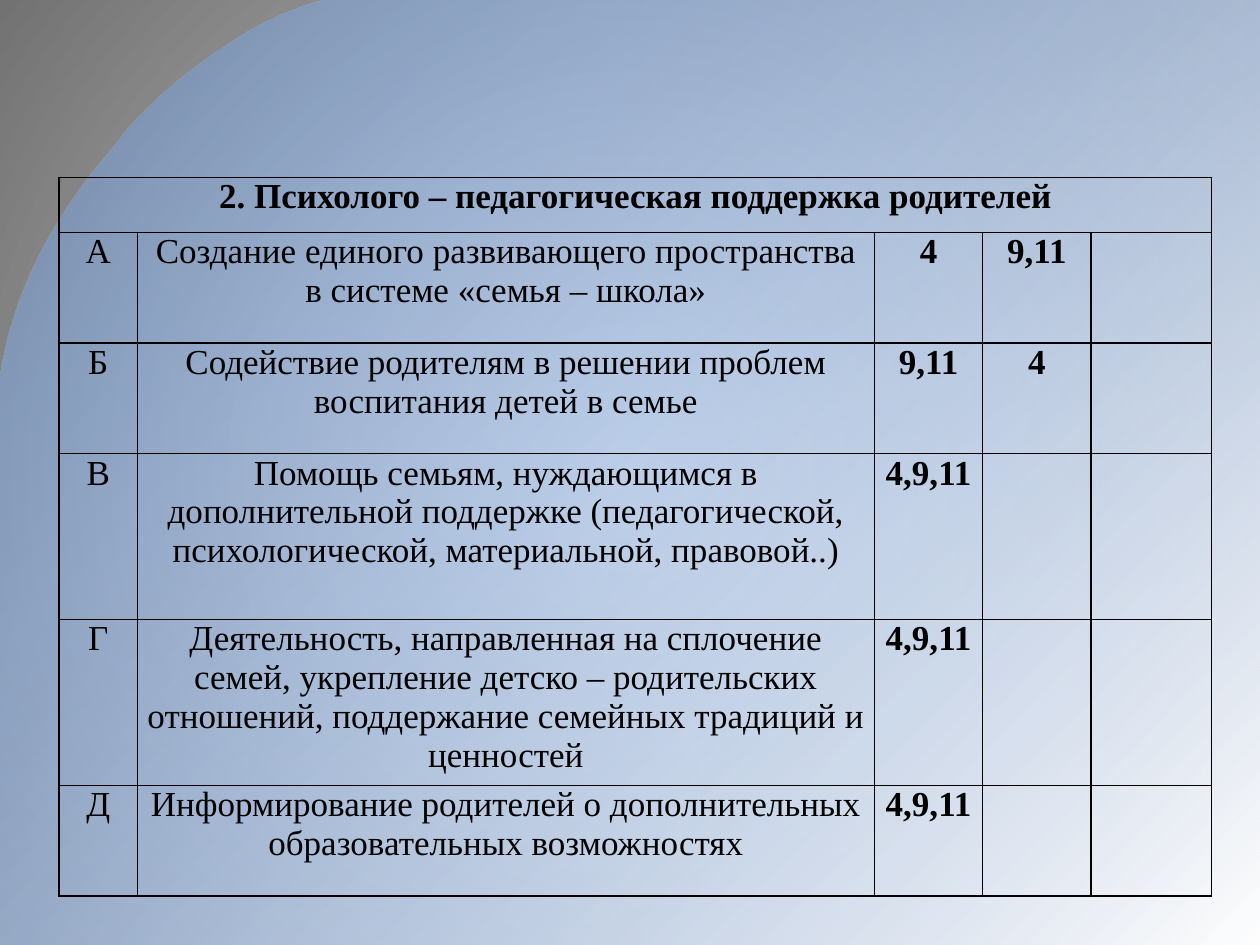
from dataclasses import dataclass

from lxml.etree import SubElement
from pptx import Presentation
from pptx.dml.color import RGBColor
from pptx.enum.text import PP_ALIGN
from pptx.oxml.ns import qn
from pptx.util import Pt


@dataclass(frozen=True)
class Theme:
    font: str = "Times New Roman"
    text_size: int = 20
    border_width: int = 1
    ink: str = "000000"
    backdrop: tuple = ("CFCFCF", "727272")
    panel: tuple = ("699DE9", "FFFFFF")
    panel_start_opacity: int = 39


THEME = Theme()
WIDTH, HEIGHT = 720, 540
CURVES = [
    [(185.76, 0), (136.8, 11.52), (83.52, 59.76), (70.56, 77.04)],
    [(70.56, 77.04), (57.6, 95.04), (11.52, 139.68), (0, 216.72)],
]
CURVE_STEPS = 24
COLUMN_WIDTHS = [44.64, 421.2, 61.92, 61.92, 68.9]
LINE_HEIGHT = 31.6
ROW_LINES = [1, 2, 2, 3, 3, 2]
HEADING = "2. Психолого – педагогическая поддержка родителей"
ROWS = [
    ["А", "Создание единого развивающего пространства в системе «семья – школа»", "4", "9,11", ""],
    ["Б", "Содействие родителям в решении проблем воспитания детей в семье", "9,11", "4", ""],
    ["В", "Помощь семьям, нуждающимся в дополнительной поддержке "
          "(педагогической, психологической, материальной, правовой..)", "4,9,11", "", ""],
    ["Г", "Деятельность, направленная на сплочение семей, укрепление детско – родительских "
          "отношений, поддержание семейных традиций и ценностей", "4,9,11", "", ""],
    ["Д", "Информирование родителей о дополнительных образовательных возможностях", "4,9,11", "", ""],
]


def set_gradient(fill, colors):
    fill.gradient()
    for stop, color in zip(fill.gradient_stops, colors):
        stop.color.rgb = RGBColor.from_string(color)


def paint_backdrop(slide):
    set_gradient(slide.background.fill, THEME.backdrop)
    gradient = slide.element.find(".//" + qn("a:gradFill"))
    gradient.remove(gradient.find(qn("a:lin")))
    radial = SubElement(gradient, qn("a:path"), path="circle")
    center = dict.fromkeys("ltrb", "50000")
    SubElement(radial, qn("a:fillToRect"), center)


def curve_points(start, first, second, end):
    for step in range(1, CURVE_STEPS + 1):
        t = step / CURVE_STEPS
        weights = ((1 - t) ** 3, 3 * t * (1 - t) ** 2, 3 * t**2 * (1 - t), t**3)
        yield tuple(
            sum(weight * value for weight, value in zip(weights, values))
            for values in zip(start, first, second, end)
        )


def add_panel(slide, left, top, width, height):
    points = [point for curve in CURVES for point in curve_points(*curve)]
    points += [(0, height), (width, height), (width, 0)]
    start_x, start_y = CURVES[0][0]
    builder = slide.shapes.build_freeform(Pt(start_x), Pt(start_y))
    builder.add_line_segments([(Pt(x), Pt(y)) for x, y in points], close=True)
    shape = builder.convert_to_shape(Pt(left), Pt(top))
    shape.shadow.inherit = False
    shape.line.fill.background()
    set_gradient(shape.fill, THEME.panel)
    shape.fill.gradient_angle = 315
    first_color = shape.element.find(".//" + qn("a:srgbClr"))
    SubElement(first_color, qn("a:alpha"), val=str(THEME.panel_start_opacity * 1000))


def style_cell(cell):
    properties = cell._tc.get_or_add_tcPr()
    for side in ("lnL", "lnR", "lnT", "lnB"):
        line = SubElement(properties, qn(f"a:{side}"), w=str(Pt(THEME.border_width)))
        solid = SubElement(line, qn("a:solidFill"))
        SubElement(solid, qn("a:srgbClr"), val=THEME.ink)
    cell.fill.background()
    cell.margin_left = cell.margin_right = Pt(5)
    cell.margin_top = cell.margin_bottom = 0


def write_cell(cell, text, bold):
    cell.text_frame.text = text
    paragraph = cell.text_frame.paragraphs[0]
    paragraph.alignment = PP_ALIGN.CENTER
    for run in paragraph.runs:
        run.font.name = THEME.font
        run.font.size = Pt(THEME.text_size)
        run.font.bold = bold
        run.font.color.rgb = RGBColor.from_string(THEME.ink)


def add_support_table(slide, left, top, width, height):
    frame = slide.shapes.add_table(
        len(ROW_LINES), len(COLUMN_WIDTHS), Pt(left), Pt(top), Pt(width), Pt(height)
    )
    table = frame.table
    table.first_row = table.horz_banding = False
    for column, column_width in zip(table.columns, COLUMN_WIDTHS):
        column.width = Pt(column_width)
    for row, lines in zip(table.rows, ROW_LINES):
        row.height = Pt(height * lines / sum(ROW_LINES))
    for cell in table.iter_cells():
        style_cell(cell)
    table.cell(0, 0).merge(table.cell(0, len(COLUMN_WIDTHS) - 1))
    write_cell(table.cell(0, 0), HEADING, True)
    for row_index, texts in enumerate(ROWS, start=1):
        for column_index, text in enumerate(texts):
            if text:
                write_cell(table.cell(row_index, column_index), text, column_index >= 2)


def main():
    presentation = Presentation()
    presentation.slide_width, presentation.slide_height = Pt(WIDTH), Pt(HEIGHT)
    slide = presentation.slides.add_slide(presentation.slide_layouts[6])
    paint_backdrop(slide)
    add_panel(slide, 0, 0, WIDTH, HEIGHT)
    add_support_table(slide, 33.84, 101.3, sum(COLUMN_WIDTHS), LINE_HEIGHT * sum(ROW_LINES))
    presentation.save("out.pptx")


if __name__ == "__main__":
    main()
